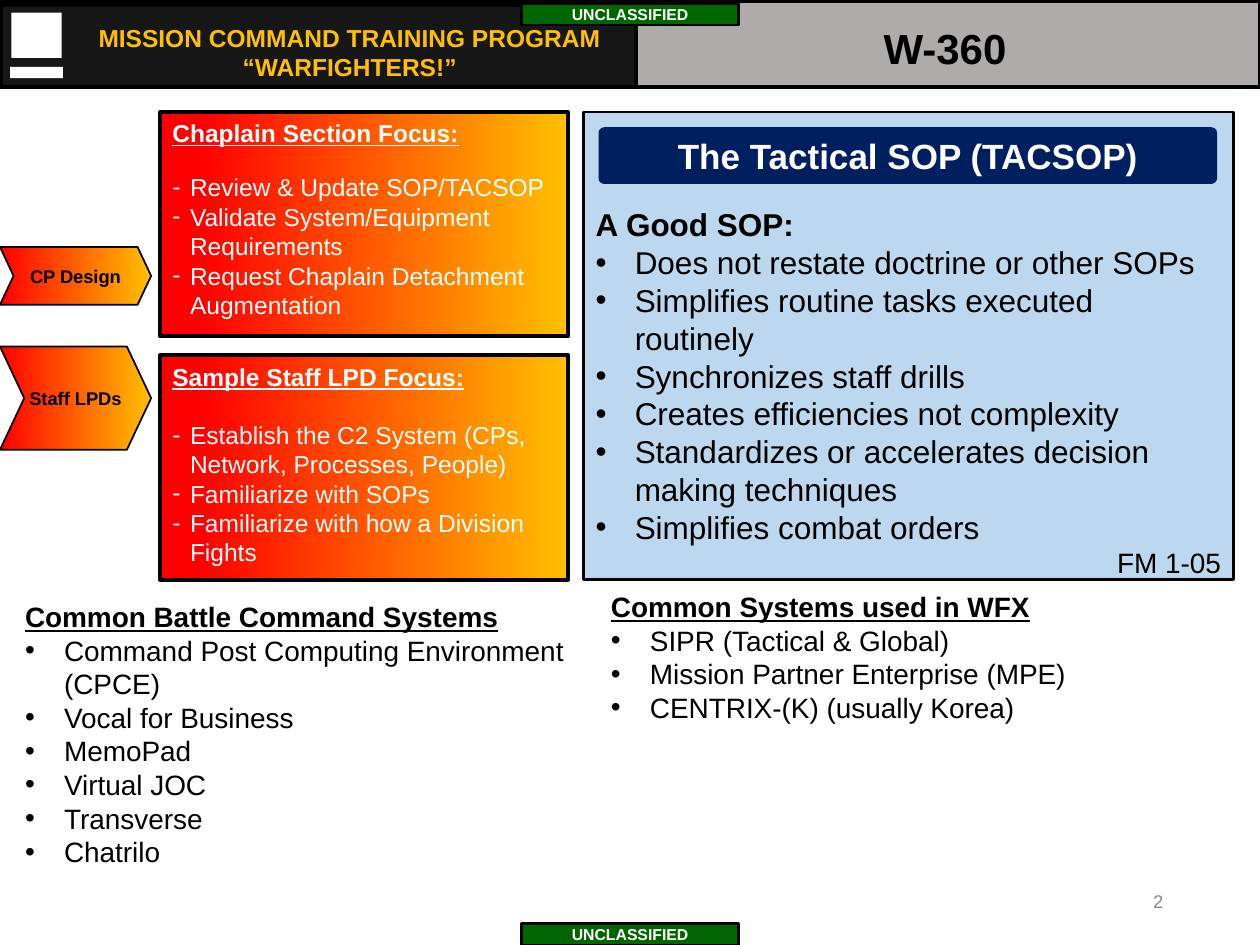
"""Build the tactical SOP slide with its banner, panels and system lists."""
from dataclasses import dataclass

from lxml import etree
from pptx import Presentation
from pptx.dml.color import RGBColor
from pptx.enum import shapes, text
from pptx.oxml import ns
from pptx.util import Inches, Pt

FORM = shapes.MSO_SHAPE
ALIGN = text.PP_ALIGN
ANCHOR = text.MSO_ANCHOR


@dataclass(frozen=True)
class Theme:
    font: str = "Arial"
    black: str = "000000"
    white: str = "FFFFFF"
    coal: str = "181717"
    gray: str = "AFABAB"
    dim: str = "8C8C8C"
    gold: str = "FFC000"
    red: str = "FF0000"
    green: str = "006600"
    sky: str = "BDD7EE"
    navy: str = "001F5F"
    mark: float = 9
    tag: float = 10.5
    note: float = 14
    list: float = 16
    body: float = 18
    head: float = 20
    code: float = 24


T = Theme()


@dataclass(frozen=True)
class Line:
    words: str
    size: float
    color: str = T.black
    bold: bool = False
    under: bool = False
    align: ALIGN = ALIGN.LEFT
    bullet: str = ""
    indent: float = 0
    before: float = 0


@dataclass(frozen=True)
class Box:
    left: float
    top: float
    width: float
    height: float
    fill: str = ""
    border: float = 0
    form: FORM = FORM.RECTANGLE
    adjust: float = 0
    blend: float | None = None
    lines: tuple[Line, ...] = ()
    anchor: ANCHOR = ANCHOR.MIDDLE
    inset: tuple[float, float] = (0.1, 0.05)


def title(words: str, size: float, color: str = T.black) -> Line:
    return Line(words, size, color, bold=True, align=ALIGN.CENTER)


def points(items: list[str], size: float, color: str = T.black, bullet: str = "•",
           indent: float = 0.31, gap: float = 0) -> tuple[Line, ...]:
    return tuple(Line(item, size, color, bullet=bullet, indent=indent,
                      before=0 if i else gap) for i, item in enumerate(items))


def add_lines(frame, box: Box) -> None:
    frame.word_wrap = True
    frame.vertical_anchor = box.anchor
    side, top = box.inset
    frame.margin_left = frame.margin_right = Inches(side)
    frame.margin_top, frame.margin_bottom = Inches(top), Inches(min(top, 0.05))
    for i, line in enumerate(box.lines):
        para = frame.add_paragraph() if i else frame.paragraphs[0]
        para.text, para.alignment = line.words, line.align
        if line.bullet:
            props = para._p.get_or_add_pPr()
            props.set("marL", str(Inches(line.indent)))
            props.set("indent", str(-Inches(line.indent)))
            etree.SubElement(props, ns.qn("a:buFont"), typeface=T.font)
            etree.SubElement(props, ns.qn("a:buChar"), char=line.bullet)
        if line.before:
            para.space_before = Pt(line.before)
        font = para.font
        font.name, font.size = T.font, Pt(line.size)
        font.bold, font.underline = line.bold, line.under
        font.color.rgb = RGBColor.from_string(line.color)


def add_box(slide, box: Box) -> None:
    place = [Inches(n) for n in (box.left, box.top, box.width, box.height)]
    if not (box.fill or box.border):
        add_lines(slide.shapes.add_textbox(*place).text_frame, box)
        return
    shape = slide.shapes.add_shape(box.form, *place)
    shape.shadow.inherit = False
    if box.adjust:
        shape.adjustments[0] = box.adjust
    if box.blend is not None:
        shape.fill.gradient()
        shape.fill.gradient_angle = 0
        stops = zip(shape.fill.gradient_stops, (box.blend, 1), (box.fill, T.gold))
        for stop, spot, color in stops:
            stop.position, stop.color.rgb = spot, RGBColor.from_string(color)
    elif box.fill:
        shape.fill.solid()
        shape.fill.fore_color.rgb = RGBColor.from_string(box.fill)
    else:
        shape.fill.background()
    if box.border:
        shape.line.width = Pt(box.border)
        shape.line.color.rgb = RGBColor.from_string(T.black)
    else:
        shape.line.fill.background()
    if box.lines:
        add_lines(shape.text_frame, box)


def focus(top: float, name: str, items: list[str], gap: float) -> Box:
    head = Line(name, T.note, T.white, bold=True, under=True)
    return Box(1.27, top, 3.24, 1.78, T.red, 2.25, blend=0.1, anchor=ANCHOR.TOP,
               lines=(head, *points(items, T.note, T.white, "-", 0.14, gap)))


def arrow(top: float, height: float, name: str) -> Box:
    return Box(0, top, 1.2, height, T.red, 1, FORM.CHEVRON, 0.235, 0,
               (title(name, T.tag),), inset=(0, 0))


def systems(left: float, top: float, width: float, height: float,
            name: str, items: list[str]) -> Box:
    head = Line(name, T.list, bold=True, under=True)
    return Box(left, top, width, height, anchor=ANCHOR.TOP,
               lines=(head, *points(items, T.list)))


def mark(top: float) -> Box:
    return Box(4.14, top, 1.72, 0.17, T.green, 1.5, inset=(0.01, 0.01),
               lines=(title("UNCLASSIFIED", T.mark, T.white),))


BOXES = (
    Box(0.01, 0.04, 5.05, 0.65, T.coal, 2.25),
    Box(5.05, 0.01, 4.95, 0.68, T.gray, 2.25),
    Box(0, 0.01, 5.05, 0.68, border=2.25),
    Box(0.08, 0.53, 0.42, 0.09, T.white),
    Box(0.09, 0.1, 0.4, 0.36, T.white),
    Box(0.5, 0.08, 4.55, 0.67, inset=(0.07, 0.04), lines=(
        title("MISSION COMMAND TRAINING PROGRAM", T.note, T.gold),
        title("“WARFIGHTERS!”", T.note, T.gold))),
    mark(7.33),
    mark(0.03),
    Box(7.08, 6.95, 2.25, 0.4, lines=(Line("2", T.tag, T.dim, align=ALIGN.RIGHT),)),
    Box(5, 0.15, 5, 0.46, lines=(title("W-360", T.code),)),
    focus(0.89, "Chaplain Section Focus:", [
        "Review & Update SOP/TACSOP", "Validate System/Equipment Requirements",
        "Request Chaplain Detachment Augmentation"], 14),
    systems(4.75, 4.63, 4.38, 1.48, "Common Systems used in WFX", [
        "SIPR (Tactical & Global)", "Mission Partner Enterprise (MPE)",
        "CENTRIX-(K) (usually Korea)"]),
    Box(4.63, 0.89, 5.16, 3.71, T.sky, 1.5, anchor=ANCHOR.TOP, inset=(0.1, 0.74), lines=(
        Line("A Good SOP:", T.body, bold=True),
        *points(["Does not restate doctrine or other SOPs",
                 "Simplifies routine tasks executed routinely",
                 "Synchronizes staff drills", "Creates efficiencies not complexity",
                 "Standardizes or accelerates decision making techniques",
                 "Simplifies combat orders"], T.body),
        Line("FM 1-05", T.list, align=ALIGN.RIGHT))),
    Box(4.75, 1.01, 4.91, 0.45, T.navy, form=FORM.ROUNDED_RECTANGLE, adjust=0.1,
        lines=(title("The Tactical SOP (TACSOP)", T.head, T.white),), inset=(0, 0)),
    systems(0.1, 4.71, 5.02, 2.26, "Common Battle Command Systems", [
        "Command Post Computing Environment (CPCE)", "Vocal for Business",
        "MemoPad", "Virtual JOC", "Transverse", "Chatrilo"]),
    focus(2.82, "Sample Staff LPD Focus:", [
        "Establish the C2 System (CPs, Network, Processes, People)",
        "Familiarize with SOPs", "Familiarize with how a Division Fights"], 16.5),
    arrow(2.75, 0.82, "Staff LPDs"),
    arrow(1.96, 0.46, "CP Design"),
)


def main() -> None:
    deck = Presentation()
    deck.slide_width, deck.slide_height = Inches(10), Inches(7.5)
    slide = deck.slides.add_slide(deck.slide_layouts[6])
    for box in BOXES:
        add_box(slide, box)
    deck.save("out.pptx")


if __name__ == "__main__":
    main()
